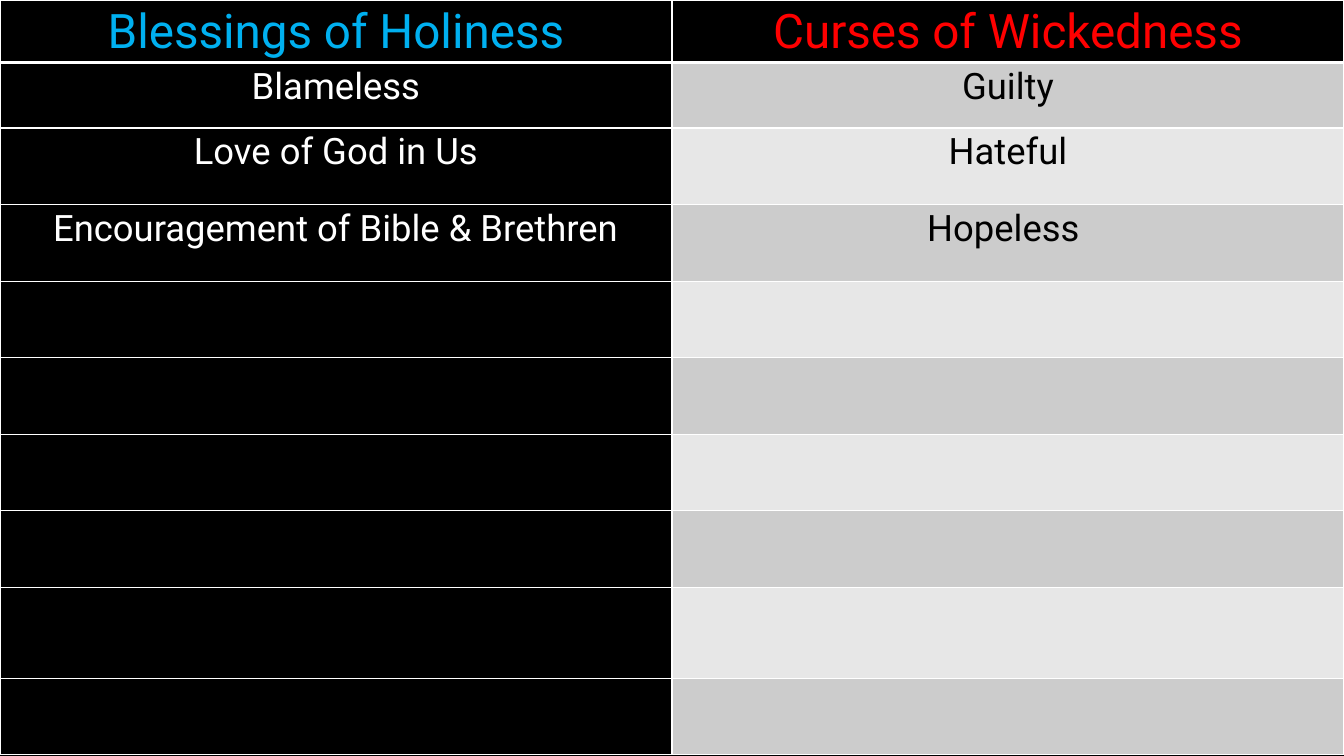
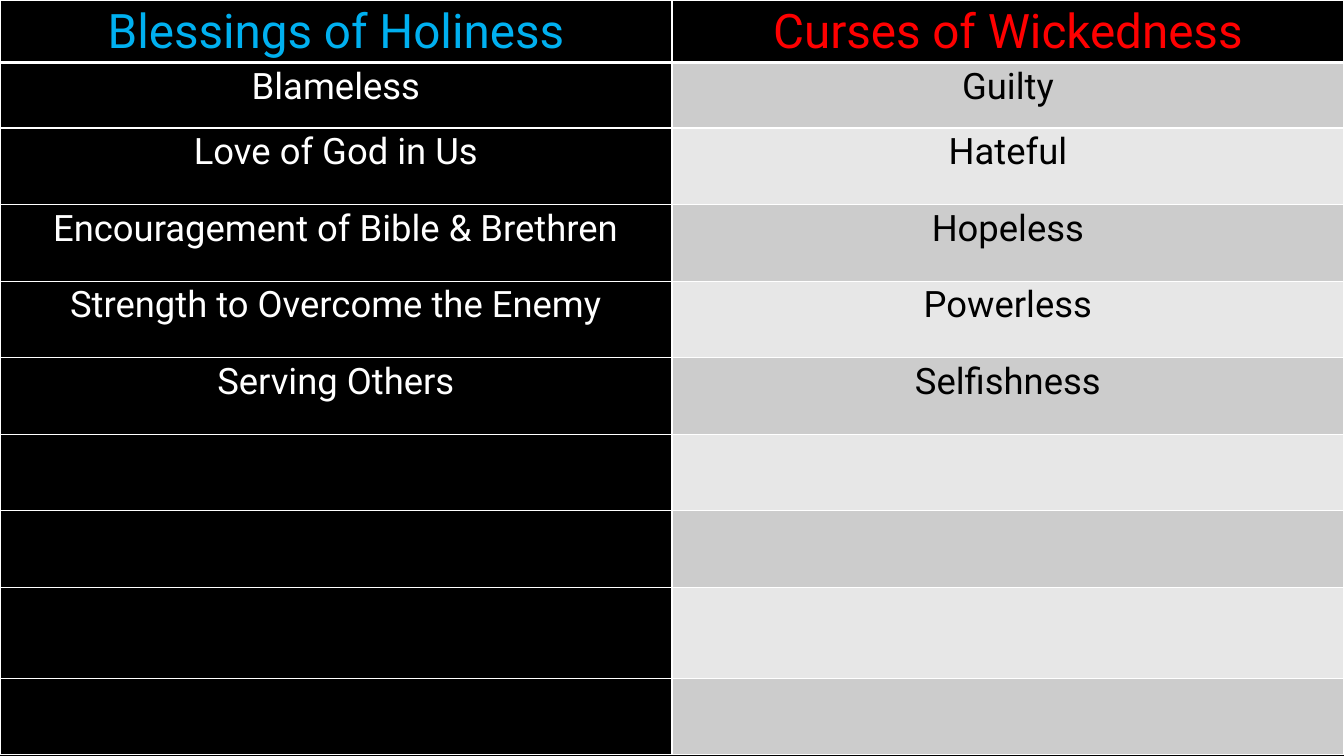
import pptx
import pptx.util
import pptx.dml.color
import pptx.enum.text
import pptx.oxml.ns
import lxml.etree

WIDE, HIGH = 13.33, 7.5
FONT = "Roboto"
HUES = {"black": "000000", "white": "FFFFFF", "blue": "00B0F0", "red": "FF0000",
        "dark": "CCCCCC", "light": "E7E7E7"}
ROWS = [0.62, 0.65] + [0.76] * 6 + [0.9, 0.76]
HEADS = ("Blessings of Holiness", "Curses of Wickedness")
START = [("Blameless", "Guilty"), ("Love of God in Us", "Hateful")]
HOPE = "Encouragement of Bible & Brethren"
DECK = [
    START + [(HOPE, "Hopeless ")],
    START + [(HOPE, "Hopeless"), ("Strength to Overcome the Enemy", "Powerless"),
             ("Serving Others", "Selfishness")],
]


def tint(name):
    """Return the named colour."""
    return pptx.dml.color.RGBColor.from_string(HUES[name])


def paint(fill, name):
    """Make a fill solid in the named colour."""
    fill.solid()
    fill.fore_color.rgb = tint(name)


def edge(cell, top, base):
    """Draw white borders, with the top and bottom widths in points."""
    props = cell._tc.get_or_add_tcPr()
    for spot, (side, width) in enumerate(zip("LRTB", (1, 1, top, base))):
        line = lxml.etree.Element(pptx.oxml.ns.qn(f"a:ln{side}"), w=str(pptx.util.Pt(width)))
        solid = lxml.etree.SubElement(line, pptx.oxml.ns.qn("a:solidFill"))
        lxml.etree.SubElement(solid, pptx.oxml.ns.qn("a:srgbClr"), val=HUES["white"])
        props.insert(spot, line)


def write(cell, text, size, hue):
    """Put one centred line of text in a cell."""
    cell.margin_left = cell.margin_right = pptx.util.Inches(0.07)
    cell.margin_top = cell.margin_bottom = 0
    para = cell.text_frame.paragraphs[0]
    para.alignment = pptx.enum.text.PP_ALIGN.CENTER
    para.line_spacing = 1.07
    run = para.add_run()
    run.text = text
    run.font.name = FONT
    run.font.size = pptx.util.Pt(size)
    run.font.bold = False
    run.font.color.rgb = tint(hue)


def grid(slide, box, pairs):
    """Fill a box with the two-column table of blessings and curses."""
    left, top, width, height = map(pptx.util.Inches, box)
    table = slide.shapes.add_table(len(ROWS), len(HEADS), left, top, width, height).table
    for col in table.columns:
        col.width = width // len(HEADS)
    lines = [HEADS] + pairs
    for r, share in enumerate(ROWS):
        table.rows[r].height = int(height * share / sum(ROWS))
        band = "dark" if r % 2 else "light"
        fills = ("black", "black" if r == 0 else band)
        size, hues = (34, ("blue", "red")) if r == 0 else (26, ("white", "black"))
        for c, fill in enumerate(fills):
            cell = table.cell(r, c)
            paint(cell.fill, fill)
            edge(cell, 3 if r == 1 else 1, 3 if r == 0 else 1)
            if r < len(lines):
                write(cell, lines[r][c], size, hues[c])


def main():
    """Build and save the deck."""
    prs = pptx.Presentation()
    prs.slide_width = pptx.util.Inches(WIDE)
    prs.slide_height = pptx.util.Inches(HIGH)
    paint(prs.slide_master.background.fill, "black")
    for pairs in DECK:
        slide = prs.slides.add_slide(prs.slide_layouts[6])
        grid(slide, (0, 0, WIDE, sum(ROWS)), pairs)
    prs.save("out.pptx")


if __name__ == "__main__":
    main()
